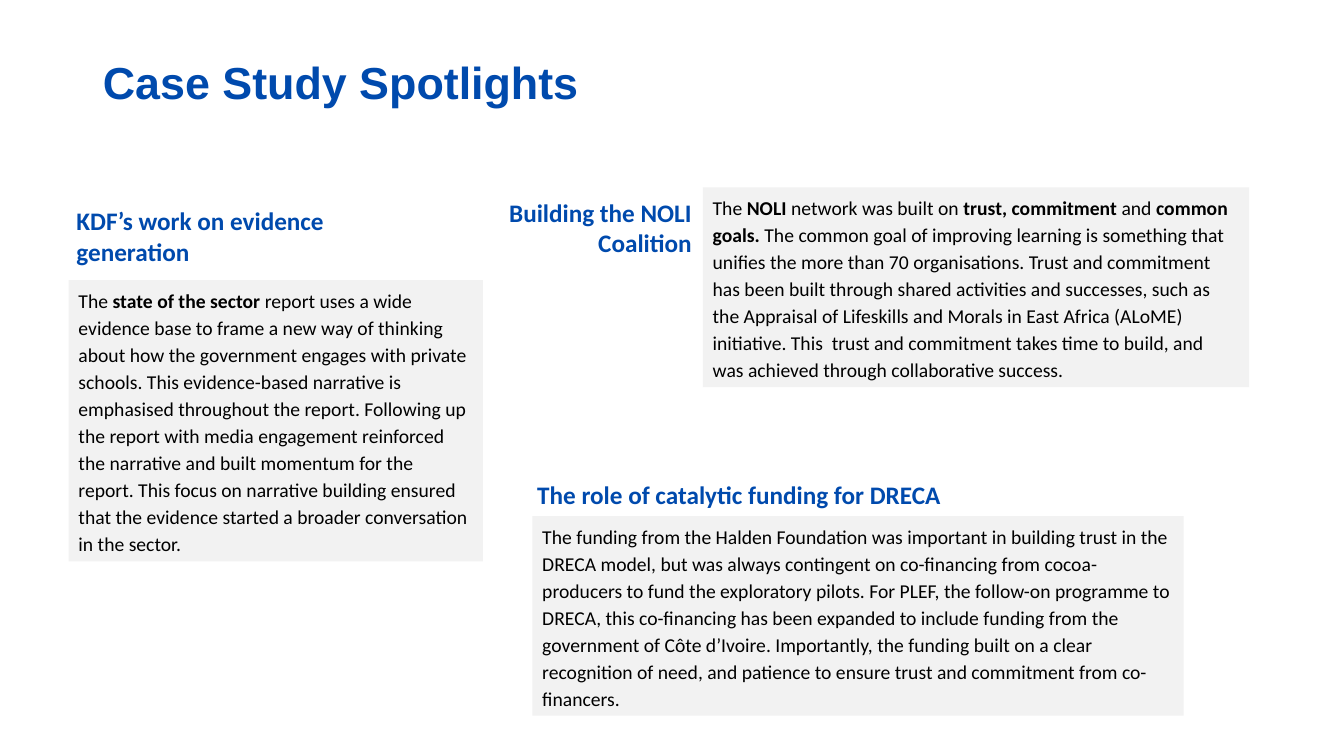
import pptx
import pptx.util
import pptx.dml.color
import pptx.enum.shapes
import pptx.enum.text
from dataclasses import dataclass

Inches = pptx.util.Inches
Align = pptx.enum.text.PP_ALIGN
Anchor = pptx.enum.text.MSO_ANCHOR
AutoSize = pptx.enum.text.MSO_AUTO_SIZE


@dataclass(frozen=True)
class Theme:
    blue: str = "004AAD"
    black: str = "000000"
    panel: str = "F2F2F2"
    title_font: str = "Arial"
    text_font: str = "Calibri"
    title_size: int = 32
    heading_size: int = 18
    body_size: int = 14


theme = Theme()


def add_span(para, text, font, size, color, bold):
    span = para.add_run()
    span.text = text
    span.font.name = font
    span.font.size = pptx.util.Pt(size)
    span.font.bold = bold
    span.font.color.rgb = pptx.dml.color.RGBColor.from_string(color)


def prepare_frame(box, align, anchor, auto_size):
    frame = box.text_frame
    frame.word_wrap = True
    frame.auto_size = auto_size
    frame.vertical_anchor = anchor
    para = frame.paragraphs[0]
    para.alignment = align
    return para


deck = pptx.Presentation()
deck.slide_width = Inches(13.33)
deck.slide_height = Inches(7.5)
page = deck.slides.add_slide(deck.slide_layouts.get_by_name("Title Only"))

# Title
title = page.shapes.title
title.left, title.top = Inches(0.92), Inches(0.4)
title.width, title.height = Inches(6.79), Inches(0.89)
para = prepare_frame(title, Align.LEFT, Anchor.MIDDLE, AutoSize.NONE)
para.line_spacing = 0.9
add_span(para, "Case Study Spotlights", theme.title_font, theme.title_size, theme.blue, True)

# Grey panels: position and size, then (text, bold) spans
panels = [
    ((5.28, 5.12, 6.46, 1.98), [
        ("The funding from the Halden Foundation was important in building trust in the "
         "DRECA model, but was always contingent on co-financing from cocoa-producers to "
         "fund the exploratory pilots. For PLEF, the follow-on programme to DRECA, this "
         "co-financing has been expanded to include funding from the government of Côte "
         "d’Ivoire. Importantly, the funding built on a clear recognition of need, and "
         "patience to ensure trust and commitment from co-financers.", False),
    ]),
    ((0.68, 2.78, 4.11, 2.79), [
        ("The", False),
        (" state of the sector ", True),
        ("report uses a wide evidence base to frame a new way of thinking about how the "
         "government engages with private schools. This evidence-based narrative is "
         "emphasised throughout the report. Following up the report with media engagement "
         "reinforced the narrative and built momentum for the report. This focus on "
         "narrative building ensured that the evidence started a broader conversation in "
         "the sector.", False),
    ]),
    ((6.97, 1.86, 5.42, 1.98), [
        ("The ", False),
        ("NOLI ", True),
        ("network was built on ", False),
        ("trust, commitment ", True),
        ("and", False),
        (" common goals. ", True),
        ("The common goal of improving learning is something that unifies the more than 70 "
         "organisations. Trust and commitment has been built through shared activities and "
         "successes, such as the Appraisal of Lifeskills and Morals in East Africa (ALoME) "
         "initiative. This  trust and commitment takes time to build, and was achieved "
         "through collaborative success.", False),
    ]),
]
for place, spans in panels:
    panel = page.shapes.add_shape(
        pptx.enum.shapes.MSO_SHAPE.RECTANGLE, *map(Inches, place))
    panel.shadow.inherit = False
    panel.fill.solid()
    panel.fill.fore_color.rgb = pptx.dml.color.RGBColor.from_string(theme.panel)
    panel.line.fill.background()
    para = prepare_frame(panel, Align.LEFT, Anchor.TOP, AutoSize.SHAPE_TO_FIT_TEXT)
    para.line_spacing = 1.15
    para.space_before = para.space_after = pptx.util.Pt(6)
    for text, bold in spans:
        add_span(para, text, theme.text_font, theme.body_size, theme.black, bold)

# Case study headings
headings = [
    ((0.66, 1.99, 3.48, 0.71), Align.LEFT, "KDF’s work on evidence generation"),
    ((5.23, 4.71, 4.68, 0.4), Align.LEFT, "The role of catalytic funding for DRECA"),
    ((4.76, 1.91, 2.2, 0.71), Align.RIGHT, "Building the NOLI Coalition"),
]
for place, align, text in headings:
    heading = page.shapes.add_textbox(*map(Inches, place))
    para = prepare_frame(heading, align, Anchor.TOP, AutoSize.SHAPE_TO_FIT_TEXT)
    add_span(para, text, theme.text_font, theme.heading_size, theme.blue, True)

deck.save("out.pptx")
